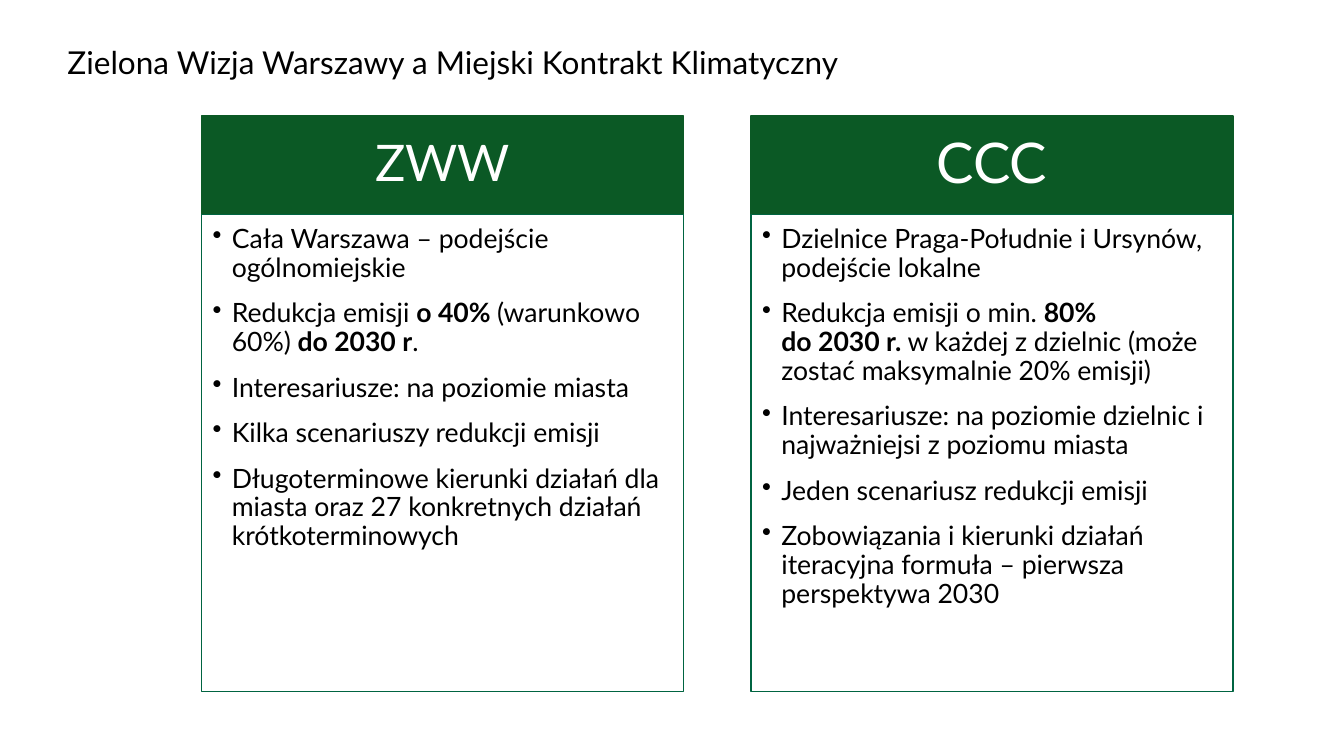
import dataclasses

import lxml.etree
import pptx
import pptx.dml.color
import pptx.enum.shapes
import pptx.enum.text
import pptx.oxml.ns
import pptx.util

Inches = pptx.util.Inches
Pt = pptx.util.Pt
Anchor = pptx.enum.text.MSO_ANCHOR
Align = pptx.enum.text.PP_ALIGN


@dataclasses.dataclass(frozen=True)
class Theme:
    """Colours and type sizes of the slide."""
    font: str = "Lato"
    ink: str = "000000"
    light: str = "FFFFFF"
    green: str = "0B5925"
    edge: str = "006441"
    title: float = 22.5
    body: float = 19


THEME = Theme()
LEFT, TOP = 2, 1.15
WIDTH, STEP = 4.78, 5.45
HEAD, BODY = 0.98, 4.73

CARDS = [
    ("ZWW", 36, [
        "Cała Warszawa – podejście ogólnomiejskie",
        "Redukcja emisji *o 40% *(warunkowo 60%)* do 2030 r*.",
        "Interesariusze: na poziomie miasta",
        "Kilka scenariuszy redukcji emisji",
        "Długoterminowe kierunki działań dla miasta "
        "oraz 27 konkretnych działań krótkoterminowych",
    ]),
    ("CCC", 40, [
        "Dzielnice Praga-Południe i Ursynów, podejście lokalne",
        "Redukcja emisji o min. *80% \ndo 2030 r.* w każdej z dzielnic "
        "(może zostać maksymalnie 20% emisji)",
        "Interesariusze: na poziomie dzielnic i najważniejsi z poziomu miasta",
        "Jeden scenariusz redukcji emisji",
        "Zobowiązania i kierunki działań \n"
        "iteracyjna formuła – pierwsza perspektywa 2030",
    ]),
]


def tint(code):
    """Turn a hex code into a colour."""
    return pptx.dml.color.RGBColor.from_string(code)


def style(font, size, code):
    """Set the face, size and colour of a font."""
    font.name = THEME.font
    font.size = Pt(size)
    font.color.rgb = tint(code)


def inset(frame, left, top, right, bottom):
    """Wrap a text frame and set its margins in inches."""
    frame.word_wrap = True
    frame.margin_left, frame.margin_top = Inches(left), Inches(top)
    frame.margin_right, frame.margin_bottom = Inches(right), Inches(bottom)


def label(frame, text, size, code, align):
    """Write one line of text, centred in height."""
    frame.vertical_anchor = Anchor.MIDDLE
    frame.text = text
    para = frame.paragraphs[0]
    para.alignment = align
    para.line_spacing = 0.9
    style(para.runs[0].font, size, code)


def bullet(para, text):
    """Write a bullet whose starred parts are bold."""
    props = para._p.get_or_add_pPr()
    props.set("marL", str(Inches(0.19)))
    props.set("indent", str(-Inches(0.19)))
    mark = lxml.etree.SubElement(props, pptx.oxml.ns.qn("a:buChar"))
    mark.set("char", "•")
    para.level = 1
    para.alignment = Align.LEFT
    para.line_spacing = 0.9
    para.space_after = Pt(12)
    for part, piece in enumerate(text.split("*")):
        for row, line in enumerate(piece.split("\n")):
            if row:
                para.add_line_break()
            run = para.add_run()
            run.text = line
            style(run.font, THEME.body, THEME.ink)
            run.font.bold = part % 2 == 1


def panel(slide, left, top, height, edge):
    """Add an outlined rectangle one column wide."""
    shape = slide.shapes.add_shape(
        pptx.enum.shapes.MSO_SHAPE.RECTANGLE,
        Inches(left), Inches(top), Inches(WIDTH), Inches(height))
    shape.shadow.inherit = False
    shape.fill.background()
    shape.line.color.rgb = tint(edge)
    shape.line.width = Pt(1)
    return shape


def card(slide, col, name, size, items):
    """Add a column with a header and a list."""
    left = LEFT + col * STEP
    head = panel(slide, left, TOP, HEAD, THEME.green)
    head.fill.solid()
    head.fill.fore_color.rgb = tint(THEME.green)
    inset(head.text_frame, 0.3, 0.17, 0.3, 0.17)
    label(head.text_frame, name, size, THEME.light, Align.CENTER)

    frame = panel(slide, left, TOP + HEAD, BODY, THEME.edge).text_frame
    inset(frame, 0.11, 0.11, 0.15, 0.17)
    frame.vertical_anchor = Anchor.TOP
    for row, item in enumerate(items):
        para = frame.add_paragraph() if row else frame.paragraphs[0]
        bullet(para, item)


def title(slide, text):
    """Add the slide title."""
    box = slide.shapes.add_textbox(
        Inches(0.57), Inches(0.23), Inches(8.92), Inches(0.81))
    inset(box.text_frame, 0.1, 0.05, 0.1, 0.05)
    label(box.text_frame, text, THEME.title, THEME.ink, Align.LEFT)


def main():
    """Build and save the slide."""
    deck = pptx.Presentation()
    deck.slide_width, deck.slide_height = Inches(13.33), Inches(7.5)
    slide = deck.slides.add_slide(deck.slide_layouts[6])
    title(slide, "Zielona Wizja Warszawy a Miejski Kontrakt Klimatyczny")
    for col, (name, size, items) in enumerate(CARDS):
        card(slide, col, name, size, items)
    deck.save("out.pptx")


if __name__ == "__main__":
    main()
